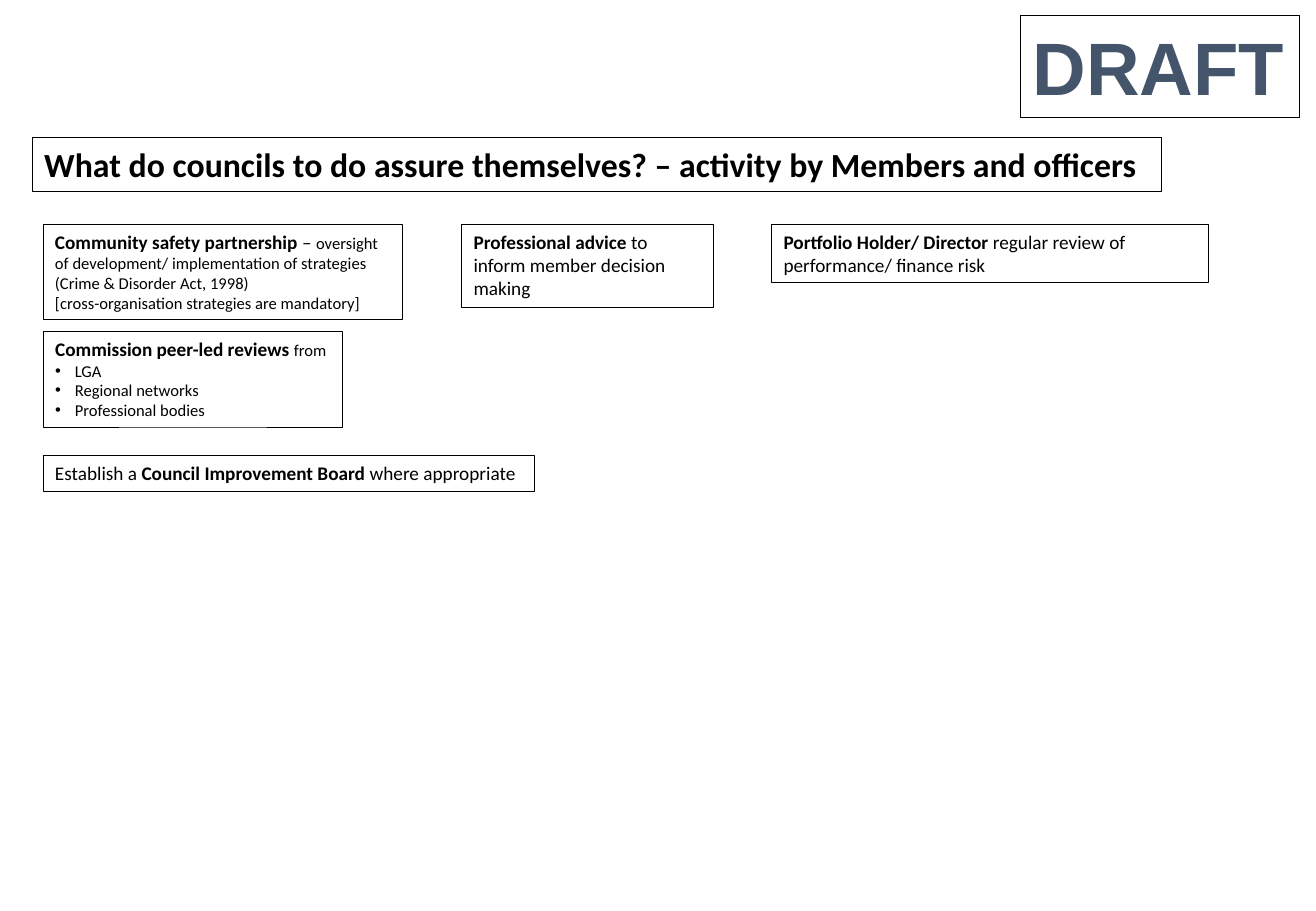
import pptx
import pptx.util
import pptx.dml.color
import pptx.enum.text
import pptx.oxml
import pptx.oxml.ns

Cm, Pt = pptx.util.Cm, pptx.util.Pt
FIT = pptx.enum.text.MSO_AUTO_SIZE
COLORS = {"ink": "000000", "draft": "44546A"}
LARGE, SMALL = 11.4, 9.8


def color(name):
    """Return a named colour."""
    return pptx.dml.color.RGBColor.from_string(COLORS[name])


def bullet(para, char):
    """Set a hanging bullet, or none when char is empty."""
    props = para._p.get_or_add_pPr()
    indent = Cm(0.41) if char else 0
    props.set("marL", str(indent))
    props.set("indent", str(-indent))
    tag = f'a:buChar char="{char}"' if char else "a:buNone"
    props.append(pptx.oxml.parse_xml(f"<{tag} {pptx.oxml.ns.nsdecls('a')}/>"))


def write(para, parts, font="Calibri", ink="ink"):
    """Write (text, size, bold) parts into a paragraph."""
    para.alignment = pptx.enum.text.PP_ALIGN.LEFT
    para.line_spacing = 1.0
    para.space_before = para.space_after = Pt(0)
    for text, size, bold in parts:
        run = para.add_run()
        run.text = text
        run.font.name = font
        run.font.size = Pt(size)
        run.font.bold = bold
        run.font.color.rgb = color(ink)


def frame(shape, place, wrap=True, weight=0.25, fit=FIT.NONE):
    """Place and outline a shape and return its text frame."""
    shape.left, shape.top, shape.width, shape.height = map(Cm, place)
    shape.line.color.rgb = color("ink")
    shape.line.width = Pt(weight)
    text = shape.text_frame
    text.word_wrap = wrap
    text.auto_size = fit
    text.vertical_anchor = pptx.enum.text.MSO_ANCHOR.TOP
    return text


def box(slide, place, paras, wrap=True, weight=0.25, **style):
    """Add an outlined text box."""
    shape = slide.shapes.add_textbox(*map(Cm, place))
    text = frame(shape, place, wrap, weight, FIT.SHAPE_TO_FIT_TEXT)
    for i, parts in enumerate(paras):
        para = text.add_paragraph() if i else text.paragraphs[0]
        write(para, parts, **style)


def title(slide, place, words):
    """Fill the title placeholder."""
    text = frame(slide.shapes.title, place)
    write(text.paragraphs[0], [(words, 20, True)])


def listing(slide, place, lead, items):
    """Fill the body placeholder with a lead line and bullets."""
    text = frame(slide.placeholders[1], place)
    write(text.paragraphs[0], lead)
    bullet(text.paragraphs[0], "")
    for item in items:
        para = text.add_paragraph()
        write(para, [(item, SMALL, False)])
        bullet(para, "•")


def main():
    """Build the slide and save it."""
    deck = pptx.Presentation()
    deck.slide_width, deck.slide_height = Cm(27.51), Cm(19.05)
    slide = deck.slides.add_slide(deck.slide_layouts[1])
    left, top = 0.9, 4.69

    title(slide, (0.67, 2.87, 23.6, 1.12),
          "What do councils to do assure themselves? – activity by Members and officers")
    listing(slide, (left, 6.93, 6.25, 2),
            [("Commission peer-led reviews ", LARGE, True), ("from", SMALL, False)],
            ["LGA", "Regional networks", "Professional bodies"])
    box(slide, (left, top, 7.52, 1.98), [
        [("Community safety partnership ", LARGE, True),
         ("– ", LARGE, False),
         ("oversight of development/ implementation of strategies "
          "(Crime & Disorder Act, 1998)", SMALL, False)],
        [("[cross-organisation strategies are mandatory]", SMALL, False)]])
    box(slide, (left, 9.53, 10.27, 0.74), [
        [("Establish a ", LARGE, False),
         ("Council Improvement Board ", LARGE, True),
         ("where appropriate", LARGE, False)]], wrap=False)
    box(slide, (16.13, top, 9.12, 1.22), [
        [("Portfolio Holder/ Director ", LARGE, True),
         ("regular review of performance/ finance risk", LARGE, False)]])
    box(slide, (9.65, top, 5.26, 1.73), [
        [("Professional advice ", LARGE, True),
         ("to inform member decision making", LARGE, False)]])
    box(slide, (21.34, 0.33, 5.82, 2.13), [[("DRAFT", 44, True)]],
        wrap=False, weight=0.75, font="Arial", ink="draft")
    deck.save("out.pptx")


if __name__ == "__main__":
    main()
